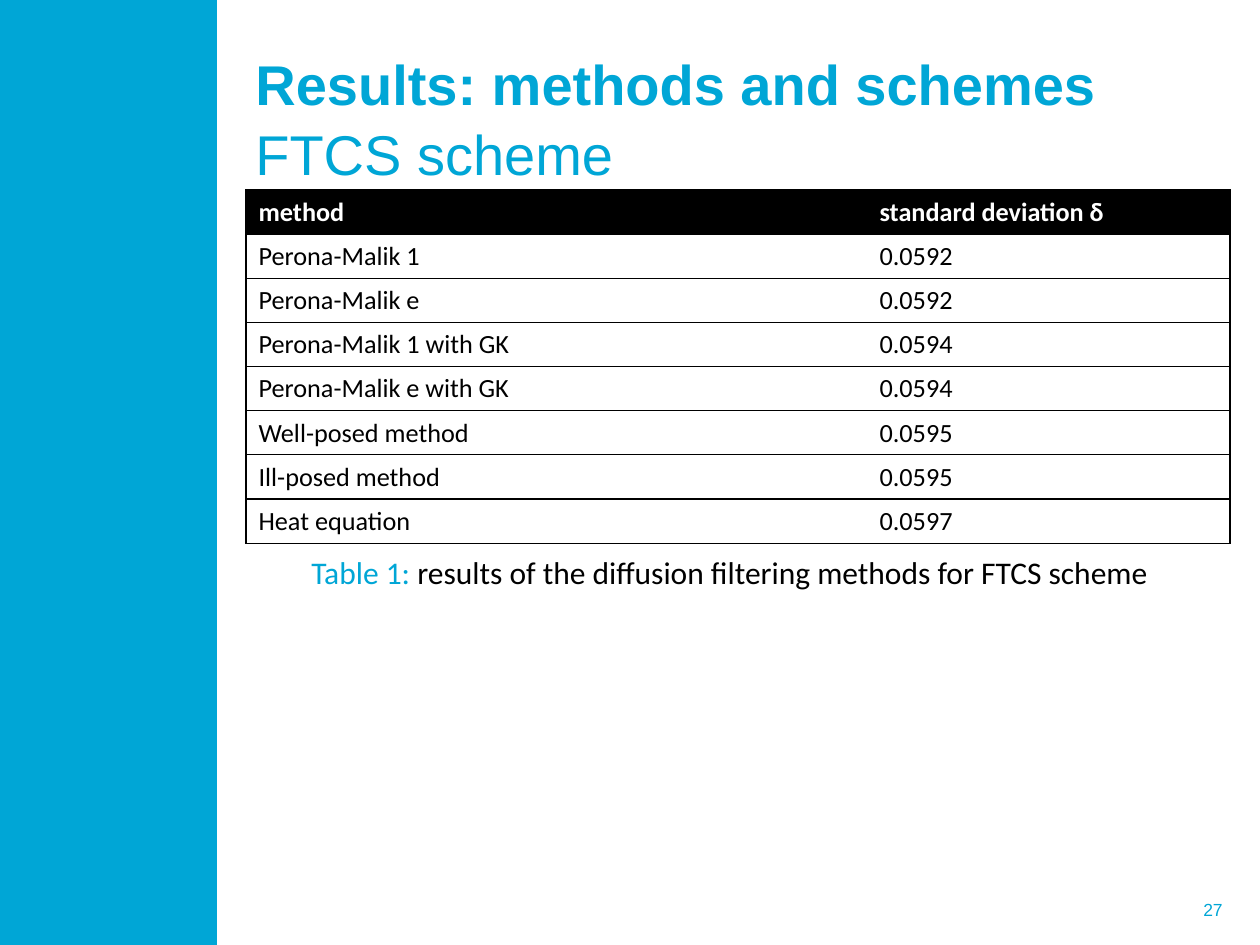
from dataclasses import dataclass

from lxml import etree
from pptx import Presentation
from pptx import util as u
from pptx.dml.color import RGBColor
from pptx.enum import shapes, text
from pptx.oxml.ns import qn

PX = u.Inches(1) // 126


@dataclass(frozen=True)
class Theme:
    cyan: str = "00A6D6"
    black: str = "000000"
    white: str = "FFFFFF"
    heading_font: str = "Arial"
    body_font: str = "Calibri"
    title_size: int = 32
    caption_size: int = 18
    table_size: int = 15
    number_size: int = 10
    border_width: float = 0.75


class SlideBuilder:
    def __init__(self, slide, theme):
        self.slide = slide
        self.theme = theme

    def box(self, *bounds):
        return [length * PX for length in bounds]

    def style_font(self, font, color, **values):
        font.color.rgb = RGBColor.from_string(color)
        for name, value in values.items():
            setattr(font, name, u.Pt(value) if name == "size" else value)

    def panel(self, bounds, color):
        shape = self.slide.shapes.add_shape(
            shapes.MSO_SHAPE.RECTANGLE, *self.box(*bounds))
        shape.shadow.inherit = False
        shape.fill.solid()
        shape.fill.fore_color.rgb = RGBColor.from_string(color)
        shape.line.fill.background()

    def text(self, bounds, lines, frame_format, paragraph_format, **font):
        """Each line is a list of (text, color, bold) runs."""
        frame = self.slide.shapes.add_textbox(*self.box(*bounds)).text_frame
        paragraph = frame.paragraphs[0]
        for target, values in ((frame, frame_format),
                               (paragraph, paragraph_format)):
            for name, value in values.items():
                setattr(target, name, value)
        for index, line in enumerate(lines):
            if index:
                paragraph.add_line_break()
            for words, color, bold in line:
                run = paragraph.add_run()
                run.text = words
                self.style_font(run.font, color, bold=bold, **font)

    def border(self, cell, sides):
        properties = cell._tc.get_or_add_tcPr()
        for side in "LRTB":
            line = etree.SubElement(properties, qn(f"a:ln{side}"))
            if side in sides:
                line.set("w", str(u.Pt(self.theme.border_width)))
                fill = etree.SubElement(line, qn("a:solidFill"))
                etree.SubElement(fill, qn("a:srgbClr"), val=self.theme.black)
            else:
                etree.SubElement(line, qn("a:noFill"))

    def table(self, left, top, widths, row_height, rows):
        theme = self.theme
        table = self.slide.shapes.add_table(
            len(rows), len(widths),
            *self.box(left, top, sum(widths), row_height * len(rows))).table
        table.horz_banding = False
        for column, width in zip(table.columns, widths):
            column.width = width * PX
        for row_index, row in enumerate(rows):
            header = row_index == 0
            for column_index, value in enumerate(row):
                cell = table.cell(row_index, column_index)
                # Rules between rows, with only the outer edges at the sides
                self.border(cell, "TB" + ("L" if column_index == 0 else "")
                            + ("R" if column_index == len(row) - 1 else ""))
                if header:
                    cell.fill.solid()
                    cell.fill.fore_color.rgb = RGBColor.from_string(theme.black)
                else:
                    cell.fill.background()
                cell.text = value
                self.style_font(cell.text_frame.paragraphs[0].runs[0].font,
                                theme.white if header else theme.black,
                                name=theme.body_font, size=theme.table_size,
                                bold=header)


def main():
    presentation = Presentation()
    presentation.slide_width = 1260 * PX
    presentation.slide_height = 945 * PX
    slide = presentation.slides.add_slide(presentation.slide_layouts[6])
    theme = Theme()
    builder = SlideBuilder(slide, theme)
    middle = {"word_wrap": True, "vertical_anchor": text.MSO_ANCHOR.MIDDLE}

    # Side panel and page number
    builder.panel((0, 0, 217, 945), theme.cyan)
    builder.text((916, 885, 319, 50), [[("27", theme.cyan, False)]],
                 middle, {"alignment": text.PP_ALIGN.RIGHT},
                 name=theme.heading_font, size=theme.number_size)

    # Title
    builder.text((243, 38, 979, 157),
                 [[("Results: methods and schemes", theme.cyan, True)],
                  [("FTCS scheme", theme.cyan, False)]],
                 middle, {"line_spacing": 1.05},
                 name=theme.heading_font, size=theme.title_size)

    # Results table
    builder.table(246, 190, (621, 363), 44, [
        ("method", "standard deviation δ"),
        ("Perona-Malik 1", "0.0592"),
        ("Perona-Malik e", "0.0592"),
        ("Perona-Malik 1 with GK", "0.0594"),
        ("Perona-Malik e with GK", "0.0594"),
        ("Well-posed method", "0.0595"),
        ("Ill-posed method", "0.0595"),
        ("Heat equation", "0.0597"),
    ])

    # Caption
    builder.text((299, 547, 873, 50),
                 [[("Table 1: ", theme.cyan, False),
                   ("results of the diffusion filtering methods for FTCS scheme",
                    theme.black, False)]],
                 {"word_wrap": False,
                  "auto_size": text.MSO_AUTO_SIZE.SHAPE_TO_FIT_TEXT}, {},
                 name=theme.body_font, size=theme.caption_size)

    presentation.save("out.pptx")


if __name__ == "__main__":
    main()
